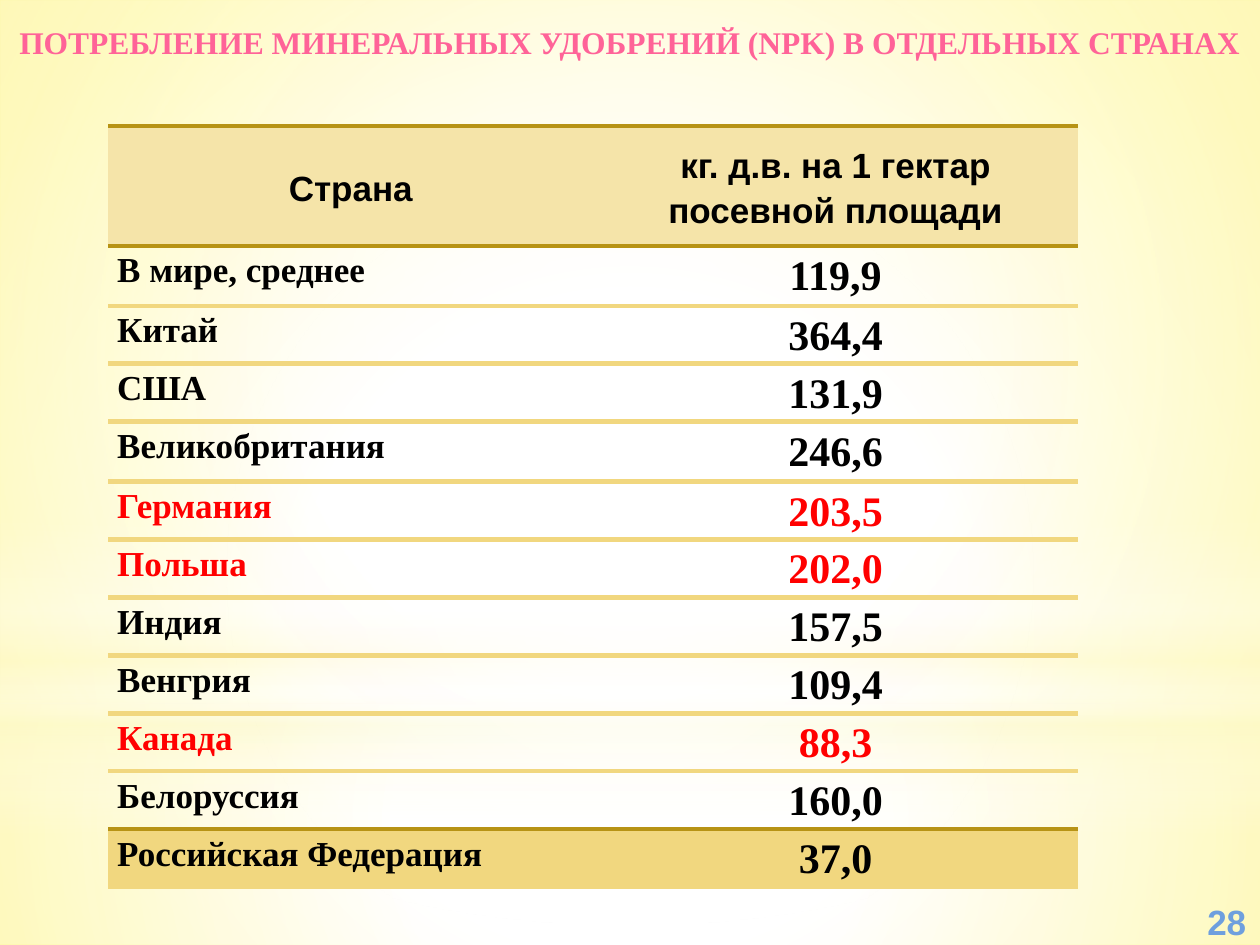
from lxml.etree import SubElement
from pptx import Presentation
from pptx.dml.color import RGBColor
from pptx.enum.shapes import MSO_SHAPE
from pptx.enum.text import MSO_ANCHOR, MSO_AUTO_SIZE, PP_ALIGN
from pptx.oxml import parse_xml
from pptx.oxml.ns import nsdecls, qn
from pptx.util import Pt

WHITE = RGBColor(0xFF, 0xFF, 0xFF)
LEMON = RGBColor(0xFF, 0xF5, 0x77)
CREAM = RGBColor(0xFE, 0xFA, 0xC9)
PINK = RGBColor(0xFF, 0x63, 0x98)
BLUE = RGBColor(0x6E, 0x9F, 0xDE)
BLACK = RGBColor(0, 0, 0)
RED = RGBColor(0xFF, 0, 0)
GOLD = RGBColor(0xB7, 0x93, 0x15)
SAND = RGBColor(0xF1, 0xD7, 0x7F)
PALE = RGBColor(0xF5, 0xE4, 0xA9)

WIDE, HIGH = 720, 540
SERIF, SANS = "Times New Roman", "Arial"
TITLE = "ПОТРЕБЛЕНИЕ МИНЕРАЛЬНЫХ УДОБРЕНИЙ (NPK) В ОТДЕЛЬНЫХ СТРАНАХ"
HEAD = ("Страна", "кг. д.в. на 1 гектар посевной площади")
ROWS = [
    ("В мире, среднее", "119,9"),
    ("Китай", "364,4"),
    ("США", "131,9"),
    ("Великобритания", "246,6"),
    ("Германия", "203,5"),
    ("Польша", "202,0"),
    ("Индия", "157,5"),
    ("Венгрия", "109,4"),
    ("Канада", "88,3"),
    ("Белоруссия", "160,0"),
    ("Российская Федерация", "37,0"),
]
MARKED = {"Германия", "Польша", "Канада"}
TALL = {0: 68.5, 1: 34.3, 4: 34.3, 11: 34.3}
CENTRE = (50, 50, 50, 50)


def blend(fill, owner, stops, focus=None):
    """Fill with (percent, colour, opacity) stops, round a focus or downwards."""
    fill.solid()
    solid = next(owner.iter(qn("a:solidFill")))
    marks = "".join(
        f'<a:gs pos="{pos * 1000}"><a:srgbClr val="{color}">'
        f'<a:alpha val="{alpha * 1000}"/></a:srgbClr></a:gs>'
        for pos, color, alpha in stops)
    if focus:
        left, top, right, low = (side * 1000 for side in focus)
        way = (f'<a:path path="circle"><a:fillToRect l="{left}" t="{top}" '
               f'r="{right}" b="{low}"/></a:path>')
    else:
        way = '<a:lin ang="5400000" scaled="0"/>'
    solid.getparent().replace(solid, parse_xml(
        f'<a:gradFill {nsdecls("a")} rotWithShape="1">'
        f'<a:gsLst>{marks}</a:gsLst>{way}</a:gradFill>'))


def add_glow(slide, kind, top, height, stops, focus=None):
    glow = slide.shapes.add_shape(kind, 0, Pt(top), Pt(WIDE), Pt(height))
    glow.shadow.inherit = False
    glow.line.fill.background()
    blend(glow.fill, glow._element.spPr, stops, focus)


def add_backdrop(slide):
    back = slide.background.fill
    blend(back, slide._element.cSld,
          [(0, WHITE, 100), (42, WHITE, 100), (100, LEMON, 100)], (24, 44, 24, 12))
    box = MSO_SHAPE.RECTANGLE
    add_glow(slide, box, 402, 138,
             [(0, WHITE, 91), (37, WHITE, 76), (100, CREAM, 79)], CENTRE)
    add_glow(slide, box, 0, 402,
             [(0, WHITE, 89), (48, WHITE, 62), (100, CREAM, 79)], CENTRE)
    add_glow(slide, box, 297, 180,
             [(0, WHITE, 0), (29, WHITE, 30), (45, CREAM, 40),
              (55, WHITE, 26), (65, CREAM, 60), (100, WHITE, 0)])
    add_glow(slide, MSO_SHAPE.OVAL, 126, 402,
             [(0, WHITE, 100), (56, WHITE, 0)], CENTRE)


def style(para, face, size, color, align=PP_ALIGN.CENTER):
    para.alignment = align
    font = para.font
    font.name, font.size, font.bold = face, Pt(size), True
    font.color.rgb = color


def add_title(slide, left, top, width, height):
    """Fill the title and raise it above the backdrop."""
    title = slide.shapes.title
    title._element.getparent().append(title._element)
    title.left, title.top = Pt(left), Pt(top)
    title.width, title.height = Pt(width), Pt(height)
    frame = title.text_frame
    frame.text = TITLE
    frame.auto_size = MSO_AUTO_SIZE.NONE
    frame.vertical_anchor = MSO_ANCHOR.TOP
    frame.margin_left = frame.margin_right = frame.margin_bottom = 0
    frame.margin_top = Pt(13.2)
    style(frame.paragraphs[0], SERIF, 18, PINK)


def rule(cell, above, below):
    """Draw the lines above and below a cell; None leaves a side bare."""
    props = cell._tc.get_or_add_tcPr()
    sides = (("a:lnL", None), ("a:lnR", None), ("a:lnT", above), ("a:lnB", below))
    for spot, (tag, color) in enumerate(sides):
        line = SubElement(props, qn(tag), w=str(Pt(3)) if color else "0")
        if color:
            solid = SubElement(line, qn("a:solidFill"))
            SubElement(solid, qn("a:srgbClr"), val=str(color))
        else:
            SubElement(line, qn("a:noFill"))
        props.insert(spot, line)


def fill_cell(cell, text, face, size, color, align, shade):
    cell.text = text
    cell.margin_left = cell.margin_right = Pt(5)
    cell.margin_top = cell.margin_bottom = 0
    if shade:
        cell.fill.solid()
        cell.fill.fore_color.rgb = shade
    else:
        cell.fill.background()
    para = cell.text_frame.paragraphs[0]
    para.line_spacing = 1.15
    style(para, face, size, color, align)


def add_grid(slide, left, top, width, height):
    last = len(ROWS)
    step = (height - sum(TALL.values())) / (last + 1 - len(TALL))
    frame = slide.shapes.add_table(
        last + 1, 2, Pt(left), Pt(top), Pt(width), Pt(height))
    table = frame.table
    table.first_row = table.horz_banding = False
    for col in table.columns:
        col.width = Pt(width / 2)
    for num, texts in enumerate([HEAD] + ROWS):
        table.rows[num].height = Pt(TALL.get(num, step))
        color = RED if texts[0] in MARKED else BLACK
        shade = {0: PALE, last: SAND}.get(num)
        above = GOLD if num in (0, 1, last) else SAND
        below = None if num == last else GOLD if num in (0, last - 1) else SAND
        for col, text in enumerate(texts):
            cell = table.cell(num, col)
            align = PP_ALIGN.CENTER if col or not num else PP_ALIGN.LEFT
            size = 24 if col and num else 20
            fill_cell(cell, text, SERIF if num else SANS, size, color, align, shade)
            if not num:
                cell.vertical_anchor = MSO_ANCHOR.MIDDLE
            rule(cell, above, below)


def add_number(slide, left, top, width, height):
    box = slide.shapes.add_textbox(Pt(left), Pt(top), Pt(width), Pt(height))
    frame = box.text_frame
    frame.word_wrap = True
    frame.vertical_anchor = MSO_ANCHOR.MIDDLE
    frame.text = "28"
    style(frame.paragraphs[0], SANS, 20, BLUE)


def main():
    deck = Presentation()
    deck.slide_width, deck.slide_height = Pt(WIDE), Pt(HIGH)
    slide = deck.slides.add_slide(deck.slide_layouts[5])
    add_backdrop(slide)
    add_title(slide, 0, 0, WIDE, 39)
    add_grid(slide, 62, 72, 554, 436.2)
    add_number(slide, 682, 513, 38, 27)
    deck.save("out.pptx")


if __name__ == "__main__":
    main()
